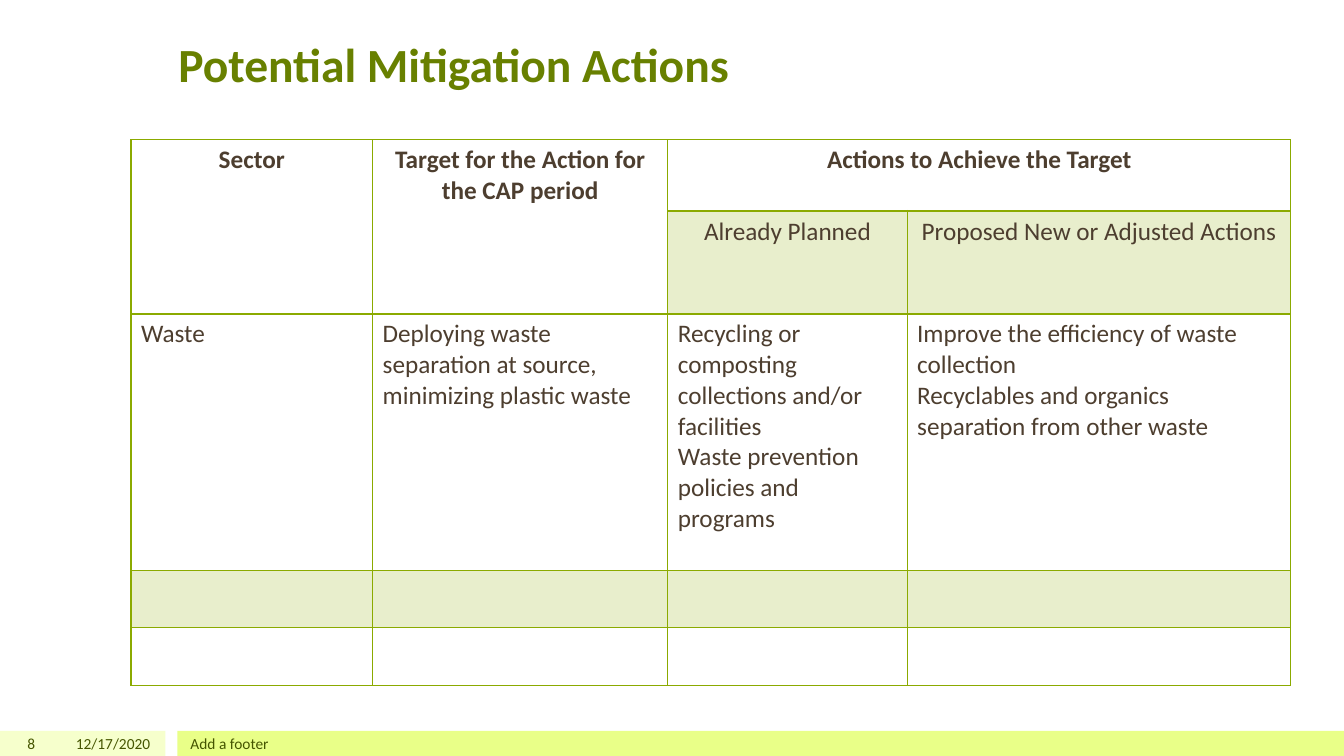
from dataclasses import dataclass

from lxml.etree import SubElement
from pptx import Presentation
from pptx.dml.color import RGBColor as RGB
from pptx.enum.shapes import MSO_SHAPE as Kind
from pptx.enum.text import MSO_ANCHOR as Anchor, PP_ALIGN as Align
from pptx.oxml.ns import qn
from pptx.util import Cm, Pt


@dataclass(frozen=True)
class Theme:
    font: str = "Calibri"
    title: str = "688000"
    body: str = "4D3E2F"
    foot: str = "455500"
    line: str = "8BAA00"
    tint: str = "E8EECC"
    pale: str = "F6FFCC"
    lime: str = "E9FF88"
    big: int = 34
    mid: int = 18
    small: int = 11


theme = Theme()


def style(frame, size, color, align, bold=False):
    for para in frame.paragraphs:
        para.alignment = align
        for run in para.runs:
            font = run.font
            font.name, font.size, font.bold = theme.font, Pt(size), bold
            font.color.rgb = RGB.from_string(color)


def border(cell, side, width):
    """Draw one side (L, R, T or B) of a cell, before its fill is set."""
    props = cell._tc.get_or_add_tcPr()
    line = SubElement(props, qn(f"a:ln{side}"), w=str(Pt(width)))
    fill = SubElement(line, qn("a:solidFill"))
    SubElement(fill, qn("a:srgbClr"), val=theme.line)


deck = Presentation()
deck.slide_width, deck.slide_height = Cm(33.87), Cm(19.05)
slide = deck.slides.add_slide(deck.slide_layouts[5])
shapes = slide.shapes

# Title
title = shapes.title
title.left, title.top, title.width, title.height = Cm(4.24), Cm(0.76), Cm(26.04), Cm(3.23)
frame = title.text_frame
frame.text = "Potential Mitigation Actions"
frame.vertical_anchor = Anchor.TOP
style(frame, theme.big, theme.title, Align.LEFT, True)

# Footer band
top, high = Cm(18.42), Cm(0.63)
for left, wide, color in [(0, 4.17, theme.pale), (4.47, 29.4, theme.lime)]:
    bar = shapes.add_shape(Kind.RECTANGLE, Cm(left), top, Cm(wide), high)
    bar.shadow.inherit = False
    bar.fill.solid()
    bar.fill.fore_color.rgb = RGB.from_string(color)
    bar.line.fill.background()

notes = [
    (0, 1.14, "8", Align.RIGHT),
    (1.27, 2.77, "12/17/2020", Align.RIGHT),
    (4.55, 25.4, "Add a footer", Align.LEFT),
]
for left, wide, text, align in notes:
    frame = shapes.add_textbox(Cm(left), top, Cm(wide), high).text_frame
    frame.word_wrap = True
    frame.vertical_anchor = Anchor.MIDDLE
    frame.margin_top = frame.margin_bottom = 0
    frame.text = text
    style(frame, theme.small, theme.foot, align)

# Table of actions
wides = [6.09, 7.44, 6.03, 9.67]
highs = [1.8, 2.59, 6.46, 1.45, 1.45]
rows = [
    ["Sector", "Target for the Action for the CAP period", "Actions to Achieve the Target", ""],
    ["", "", "Already Planned", "Proposed New or Adjusted Actions"],
    [
        "Waste",
        "Deploying waste separation at source, minimizing plastic waste",
        "Recycling or composting collections and/or facilities\n"
        "Waste prevention policies and programs",
        "Improve the efficiency of waste collection\n"
        "Recyclables and organics separation from other waste",
    ],
    [""] * 4,
    [""] * 4,
]
table = shapes.add_table(
    len(highs), len(wides), Cm(3.3), Cm(3.52), Cm(sum(wides)), Cm(sum(highs))
).table
table.first_row = table.horz_banding = False
for col, wide in zip(table.columns, wides):
    col.width = Cm(wide)
for row, high in zip(table.rows, highs):
    row.height = Cm(high)

for r, texts in enumerate(rows):
    for c, text in enumerate(texts):
        cell = table.cell(r, c)
        # The header ends one row lower in the two tall columns
        head = 2 if c < 2 else 1
        for side, edge in [("L", None), ("R", None), ("T", r), ("B", r + 1)]:
            border(cell, side, 2 if edge == head else 1)
        if r in (1, 3) and r >= head:
            cell.fill.solid()
            cell.fill.fore_color.rgb = RGB.from_string(theme.tint)
        else:
            cell.fill.background()
        if text:
            cell.text_frame.text = text
            align = Align.CENTER if r < 2 else Align.LEFT
            style(cell.text_frame, theme.mid, theme.body, align, r == 0)

for first, last in [((0, 0), (1, 0)), ((0, 1), (1, 1)), ((0, 2), (0, 3))]:
    table.cell(*first).merge(table.cell(*last))

deck.save("out.pptx")
